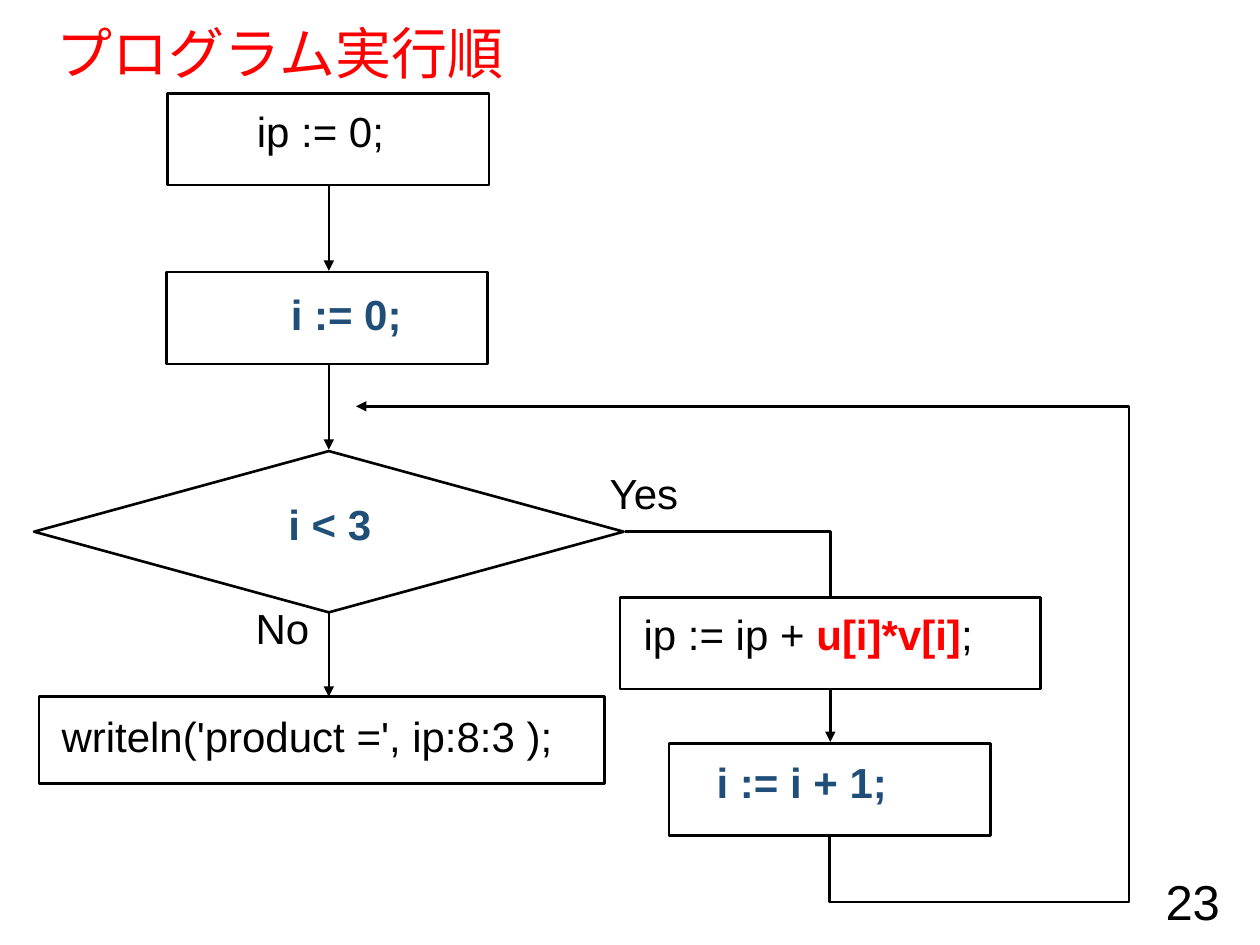
from dataclasses import dataclass

from lxml import etree
from pptx import Presentation
from pptx.dml.color import RGBColor
from pptx.enum import shapes, text
from pptx.oxml import ns
from pptx.util import Inches, Pt


@dataclass(frozen=True)
class Theme:
    font: str = "Arial"
    black: str = "000000"
    red: str = "FF0000"
    blue: str = "1F4E79"
    title: int = 32
    number: int = 28
    body: int = 24
    line: float = 1.5


THEME = Theme()
PLAIN = {"color": THEME.black, "size": THEME.body, "bold": False}
LOOP = {**PLAIN, "color": THEME.blue, "bold": True}
PRODUCT = {**PLAIN, "color": THEME.red, "bold": True}
TITLE = {**PLAIN, "color": THEME.red, "size": THEME.title}
NUMBER = {**PLAIN, "size": THEME.number}


def inches(box):
    return [Inches(v) for v in box]


def add_runs(p, runs):
    for words, style in runs:
        r = p.add_run()
        r.text = words
        values = {"name": THEME.font, "size": Pt(style["size"]), "bold": style["bold"]}
        for name, value in values.items():
            setattr(r.font, name, value)
        r.font.color.rgb = RGBColor.from_string(style["color"])


def add_text(s, box, runs, spacing=1.0, align=text.PP_ALIGN.LEFT, anchor=text.MSO_ANCHOR.TOP):
    tf = s.shapes.add_textbox(*inches(box)).text_frame
    for name, value in {"word_wrap": True, "vertical_anchor": anchor}.items():
        setattr(tf, name, value)
    p = tf.paragraphs[0]
    for name, value in {"alignment": align, "line_spacing": spacing}.items():
        setattr(p, name, value)
    add_runs(p, runs)


def set_line(line):
    line.color.rgb = RGBColor.from_string(THEME.black)
    line.width = Pt(THEME.line)


def add_node(s, box, label_box, runs, spacing=1.0, preset=shapes.MSO_SHAPE.RECTANGLE):
    sp = s.shapes.add_shape(preset, *inches(box))
    sp.shadow.inherit = False
    sp.fill.background()
    set_line(sp.line)
    left, top, width, height = label_box
    add_text(s, (box[0] + left, box[1] + top, width, height), runs, spacing)


def add_link(s, start, end, kind=shapes.MSO_CONNECTOR.STRAIGHT, arrow=True):
    link = s.shapes.add_connector(kind, *inches(start + end))
    set_line(link.line)
    props = link._element.spPr
    if arrow:
        etree.SubElement(props.find(ns.qn("a:ln")), ns.qn("a:tailEnd"), type="triangle")
    etree.SubElement(props, ns.qn("a:effectLst"))
    return link


def set_bend(link, preset, adjustments=(), **transform):
    props = link._element.spPr
    geometry = props.find(ns.qn("a:prstGeom"))
    geometry.set("prst", preset)
    guides = geometry.find(ns.qn("a:avLst"))
    for i, value in enumerate(adjustments, 1):
        etree.SubElement(guides, ns.qn("a:gd"), name=f"adj{i}", fmla=f"val {value}")
    for name, value in transform.items():
        props.find(ns.qn("a:xfrm")).set(name, value)


def add_title(s, box):
    sp = s.shapes.title
    for name, value in zip(("left", "top", "width", "height"), inches(box)):
        setattr(sp, name, value)
    tf = sp.text_frame
    tf.auto_size = text.MSO_AUTO_SIZE.NONE
    tf.vertical_anchor = text.MSO_ANCHOR.MIDDLE
    p = tf.paragraphs[0]
    for name, value in {"alignment": text.PP_ALIGN.LEFT, "line_spacing": 0.9}.items():
        setattr(p, name, value)
    add_runs(p, [("プログラム実行順", TITLE)])


def add_main_flow(s, left, top):
    axis = left + 2.34
    add_node(s, (left + 1.06, top, 2.55, 0.73), (0.61, 0.05, 1.3, 0.4), [("ip := 0;", PLAIN)])
    add_node(s, (left + 1.05, top + 1.42, 2.55, 0.73), (0.89, 0.16, 1.2, 0.34),
             [("i := 0;", LOOP)], 0.8)
    add_node(s, (left, top + 2.84, 4.68, 1.28), (1.92, 0.33, 1, 0.4),
             [("i < 3", LOOP)], preset=shapes.MSO_SHAPE.FLOWCHART_DECISION)
    add_node(s, (left + 0.04, top + 4.79, 4.49, 0.69), (0.08, 0.06, 4.3, 0.4),
             [("writeln('product =', ip:8:3 );", PLAIN)])
    for start, end in ((0.73, 1.41), (2.16, 2.83), (4.12, 4.79)):
        add_link(s, (axis, top + start), (axis, top + end))
    add_text(s, (left + 1.66, top + 3.99, 0.75, 0.4), [("No", PLAIN)])


def add_loop_body(s, left, top):
    axis = left + 1.67
    add_text(s, (left - 0.18, top - 1.08, 1.18, 0.4), [("Yes", PLAIN)])
    add_node(s, (left, top, 3.34, 0.73), (0.09, 0.04, 3, 0.4),
             [("ip := ip + ", PLAIN), ("u[i]*v[i]", PRODUCT), (";", PLAIN)])
    add_node(s, (left + 0.39, top + 1.16, 2.55, 0.73), (0.28, 0.13, 1.7, 0.34),
             [("i := i + 1;", LOOP)], 0.8)
    entry = add_link(s, (left + 0.04, top - 0.52), (axis, top),
                     shapes.MSO_CONNECTOR.ELBOW, arrow=False)
    set_bend(entry, "bentConnector2")
    add_link(s, (axis, top + 0.73), (axis, top + 1.15))
    back = add_link(s, (left - 1.92, top - 1.69), (left + 1.49, top + 2.07),
                    shapes.MSO_CONNECTOR.ELBOW)
    set_bend(back, "bentConnector4", (-15400, -63200), rot="16200000", flipV="1")


def main():
    prs = Presentation()
    prs.slide_width, prs.slide_height = Inches(10), Inches(7.5)
    s = prs.slides.add_slide(prs.slide_layouts[5])
    add_title(s, (0.35, 0.19, 9.25, 0.51))
    add_main_flow(s, 0.27, 0.74)
    add_loop_body(s, 4.92, 4.74)
    add_text(s, (7.53, 6.95, 2.25, 0.4), [("23", NUMBER)],
             align=text.PP_ALIGN.RIGHT, anchor=text.MSO_ANCHOR.MIDDLE)
    prs.save("out.pptx")


if __name__ == "__main__":
    main()
